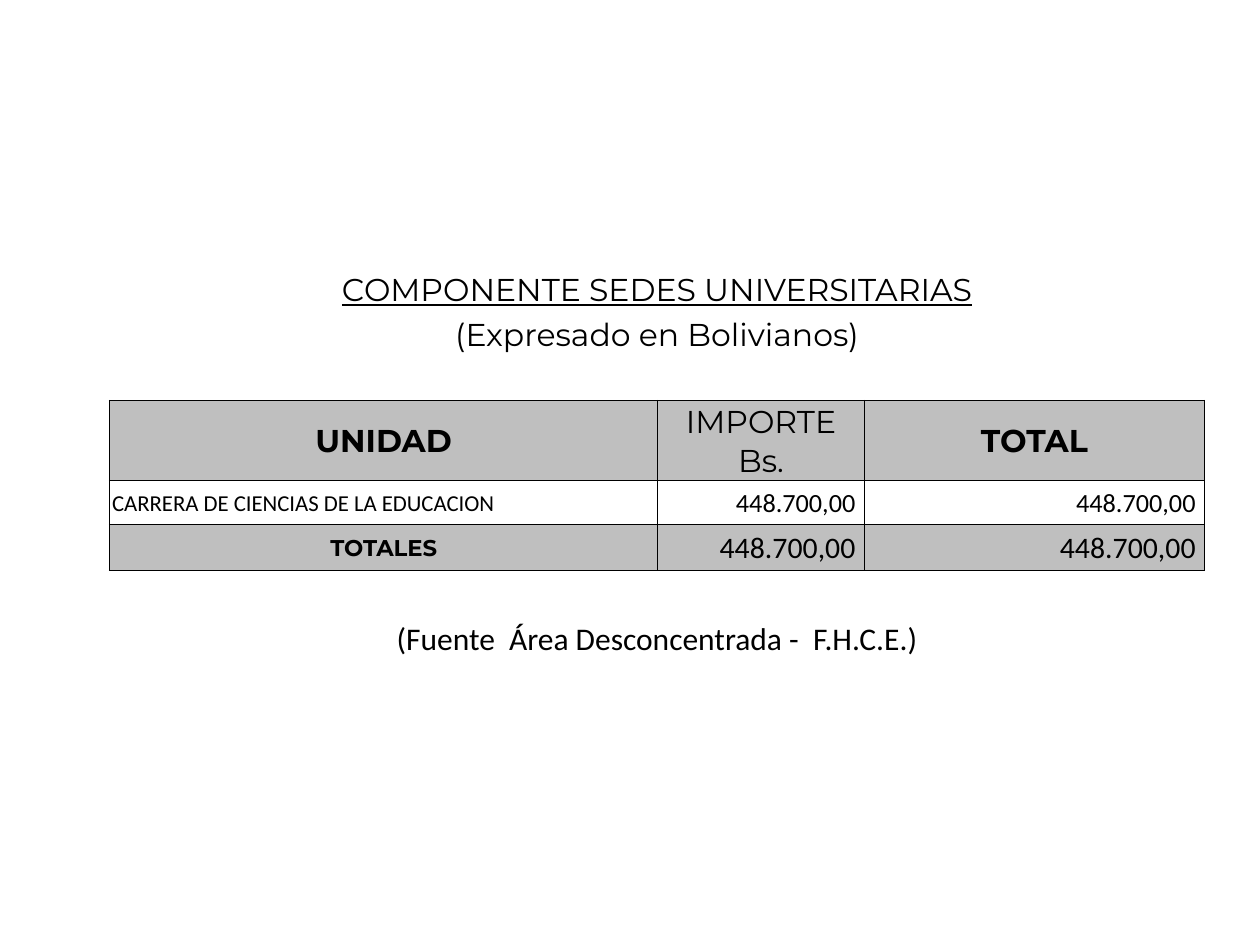
from dataclasses import dataclass
from typing import Optional

from lxml.etree import SubElement as Sub
from pptx import Presentation as Deck
from pptx.dml.color import RGBColor as Color
from pptx.enum.text import MSO_ANCHOR as Anchor, PP_ALIGN as Align
from pptx.oxml.ns import qn
from pptx.util import Inches, Pt


@dataclass(frozen=True)
class Theme:
    ink: str = "000000"
    gray: str = "BFBFBF"
    head: str = "Montserrat"
    body: str = "Calibri"
    large: int = 18
    total: int = 17
    value: int = 15
    small: int = 13
    thick: float = 1
    thin: float = 0.5


@dataclass(frozen=True)
class Style:
    font: str
    size: int
    align: Align = Align.CENTER
    bold: bool = False
    under: bool = False
    pad: float = 0.02


@dataclass(frozen=True)
class Row:
    tall: float
    texts: tuple[str, ...] = ()
    styles: tuple[Style, ...] = ()
    fill: Optional[str] = None
    top: float = 0
    base: float = 0
    inner: float = 0
    outer: float = 0
    anchor: Anchor = Anchor.MIDDLE


T = Theme()
WIDTHS = (4.35, 1.64, 2.7)
PLAIN = Style(T.head, T.large)
TITLE = Style(T.head, T.large, under=True)
STRONG = Style(T.head, T.large, bold=True)
NAME = Style(T.body, T.small, Align.LEFT)
VALUE = Style(T.body, T.value, Align.RIGHT, pad=0.07)
LABEL = Style(T.head, T.small, bold=True)
TOTAL = Style(T.body, T.total, Align.RIGHT, pad=0.07)
SOURCE = Style(T.body, T.large)
SUM = "448.700,00"

ROWS = (
    Row(0.35, ("COMPONENTE SEDES UNIVERSITARIAS",), (TITLE,), anchor=Anchor.BOTTOM),
    Row(0.35, ("(Expresado en Bolivianos)",), (PLAIN,), anchor=Anchor.BOTTOM),
    Row(0.37, base=T.thick),
    Row(0.63, ("UNIDAD", "IMPORTE Bs.", "TOTAL"), (STRONG, PLAIN, STRONG),
        T.gray, T.thick, T.thin, T.thick, T.thick),
    Row(0.35, ("CARRERA DE CIENCIAS DE LA EDUCACION", SUM, SUM), (NAME, VALUE, VALUE),
        None, T.thin, T.thin, T.thin, T.thick),
    Row(0.37, ("TOTALES", SUM, SUM), (LABEL, TOTAL, TOTAL),
        T.gray, T.thin, T.thick, T.thin, T.thick),
    Row(0.35, top=T.thick),
    Row(0.35, ("(Fuente  Área Desconcentrada -  F.H.C.E.)",), (SOURCE,), anchor=Anchor.BOTTOM),
)


def edge(cell, side: str, width: float) -> None:
    line = Sub(cell._tc.get_or_add_tcPr(), qn(f"a:ln{side}"), w=str(Pt(width)))
    if width:
        solid = Sub(line, qn("a:solidFill"))
        Sub(solid, qn("a:srgbClr"), val=T.ink)
    else:
        Sub(line, qn("a:noFill"))


def frame(cell, row: Row, col: int, last: int) -> None:
    edge(cell, "L", row.inner if col else row.outer)
    edge(cell, "R", row.outer if col == last else row.inner)
    edge(cell, "T", row.top)
    edge(cell, "B", row.base)
    if row.fill:
        cell.fill.solid()
        cell.fill.fore_color.rgb = Color.from_string(row.fill)
    else:
        cell.fill.background()
    cell.margin_left = cell.margin_right = cell.margin_top = Inches(0.02)
    cell.margin_bottom = Inches(0)
    cell.vertical_anchor = row.anchor


def write(cell, text: str, style: Style) -> None:
    cell.text_frame.text = text
    cell.margin_right = Inches(style.pad)
    para = cell.text_frame.paragraphs[0]
    para.alignment = style.align
    font = para.runs[0].font
    font.name, font.size = style.font, Pt(style.size)
    font.bold, font.underline = style.bold, style.under
    font.color.rgb = Color.from_string(T.ink)


def main() -> None:
    deck = Deck()
    deck.slide_width, deck.slide_height = Inches(10), Inches(7.5)
    slide = deck.slides.add_slide(deck.slide_layouts[6])
    tall = sum(row.tall for row in ROWS)
    grid = slide.shapes.add_table(len(ROWS), len(WIDTHS), Inches(0.87), Inches(2.11),
                                  Inches(sum(WIDTHS)), Inches(tall)).table
    grid.first_row = grid.horz_banding = False
    for col, width in zip(grid.columns, WIDTHS):
        col.width = Inches(width)
    last = len(WIDTHS) - 1
    for i, row in enumerate(ROWS):
        grid.rows[i].height = Inches(row.tall)
        for j in range(len(WIDTHS)):
            frame(grid.cell(i, j), row, j, last)
        if len(row.texts) == 1:
            grid.cell(i, 0).merge(grid.cell(i, last))
        for j, (text, style) in enumerate(zip(row.texts, row.styles)):
            write(grid.cell(i, j), text, style)
    deck.save("out.pptx")


if __name__ == "__main__":
    main()
